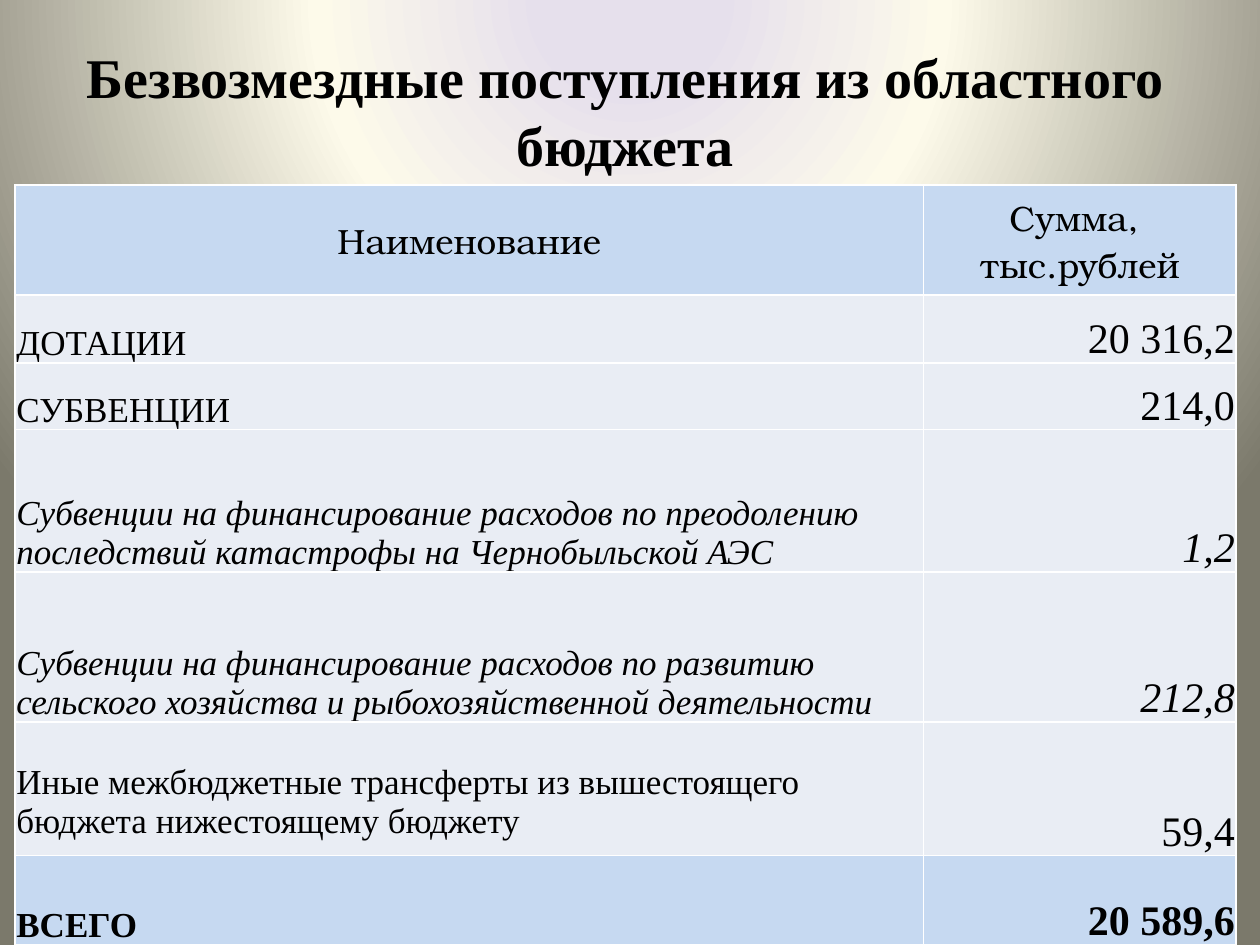
from lxml import etree
from pptx import Presentation
from pptx import util as u
from pptx.dml.color import RGBColor
from pptx.enum import text
from pptx.oxml.ns import qn

BLACK = RGBColor(0x00, 0x00, 0x00)
WHITE = RGBColor(0xFF, 0xFF, 0xFF)
HEADER_BLUE = RGBColor(0xC6, 0xD9, 0xF1)
ROW_GREY = RGBColor(0xE9, 0xED, 0xF4)
LAVENDER = RGBColor(0xE6, 0xE0, 0xEC)
CREAM = RGBColor(0xFD, 0xFA, 0xEA)
OLIVE = RGBColor(0x7B, 0x79, 0x6B)

BODY_FONT = "Times New Roman"
HEADER_FONT = "TeX Gyre Bonum"

COLUMN_WIDTHS = [7.21, 2.48]
HEADERS = ["Наименование", "Сумма, \vтыс.рублей"]
# Row height, name, amount, bold, italic
INCOME_ROWS = [
    (0.54, "ДОТАЦИИ", "20 316,2", False, False),
    (0.53, "СУБВЕНЦИИ", "214,0", False, False),
    (1.13, "Субвенции на финансирование расходов по преодолению "
           "последствий катастрофы на Чернобыльской АЭС", "1,2", False, True),
    (1.19, "Субвенции на финансирование расходов по развитию сельского "
           "хозяйства и рыбохозяйственной деятельности", "212,8", False, True),
    (1.06, "Иные межбюджетные трансферты из вышестоящего бюджета "
           "нижестоящему бюджету", "59,4", False, False),
    (0.71, "ВСЕГО", "20 589,6", True, False),
]
HEADER_HEIGHT = 0.87
TRANSFERS_ROW = 5


def set_background(slide):
    """Radial gradient centred above the slide."""
    slide.background.fill.gradient()
    gradient = slide.element.find(".//" + qn("a:gradFill"))
    for child in list(gradient):
        gradient.remove(child)
    stops = etree.SubElement(gradient, qn("a:gsLst"))
    for percent, color in [(11, LAVENDER), (40, CREAM), (100, OLIVE)]:
        stop = etree.SubElement(stops, qn("a:gs"), pos=str(percent * 1000))
        etree.SubElement(stop, qn("a:srgbClr"), val=str(color))
    circle = etree.SubElement(gradient, qn("a:path"), path="circle")
    etree.SubElement(circle, qn("a:fillToRect"),
                     l="50000", t="-80000", r="50000", b="180000")


def format_text(text_frame, size, font_name, alignment, bold=False, italic=False):
    for paragraph in text_frame.paragraphs:
        paragraph.alignment = alignment
        for run in paragraph.runs:
            font = run.font
            font.size, font.name = u.Pt(size), font_name
            font.bold, font.italic = bold, italic
            font.color.rgb = BLACK


def add_title(slide, wording):
    title = slide.shapes.title
    title.left, title.top = u.Inches(0.28), u.Inches(0.29)
    title.width, title.height = u.Inches(9.37), u.Inches(1.72)
    frame = title.text_frame
    frame.text = wording
    frame.word_wrap = True
    frame.auto_size = text.MSO_AUTO_SIZE.NONE
    frame.vertical_anchor = text.MSO_ANCHOR.TOP
    format_text(frame, 32, BODY_FONT, text.PP_ALIGN.CENTER, bold=True)


def style_cell(cell, fill_color, anchor):
    cell.margin_left = cell.margin_right = cell.margin_top = u.Inches(0.01)
    cell.margin_bottom = 0
    cell.vertical_anchor = anchor
    properties = cell._tc.get_or_add_tcPr()
    for side in ("lnL", "lnR", "lnT", "lnB"):
        line = etree.SubElement(properties, qn("a:" + side), w=str(u.Pt(1)))
        line_fill = etree.SubElement(line, qn("a:solidFill"))
        etree.SubElement(line_fill, qn("a:srgbClr"), val=str(WHITE))
    cell.fill.solid()
    cell.fill.fore_color.rgb = fill_color


def add_income_table(slide):
    heights = [HEADER_HEIGHT] + [row[0] for row in INCOME_ROWS]
    frame = slide.shapes.add_table(
        len(heights), len(COLUMN_WIDTHS), u.Inches(0.12), u.Inches(1.47),
        u.Inches(sum(COLUMN_WIDTHS)), u.Inches(sum(heights)))
    table = frame.table
    for column, width in zip(table.columns, COLUMN_WIDTHS):
        column.width = u.Inches(width)
    for row, height in zip(table.rows, heights):
        row.height = u.Inches(height)

    # Header row
    for cell, wording in zip(table.rows[0].cells, HEADERS):
        cell.text = wording
        style_cell(cell, HEADER_BLUE, text.MSO_ANCHOR.MIDDLE)
        format_text(cell.text_frame, 20, HEADER_FONT, text.PP_ALIGN.CENTER)

    # Income rows, the total in bold
    for index, (_, name, amount, bold, italic) in enumerate(INCOME_ROWS, start=1):
        columns = [(name, 20, text.PP_ALIGN.LEFT), (amount, 24, text.PP_ALIGN.RIGHT)]
        for cell, (wording, size, alignment) in zip(table.rows[index].cells, columns):
            cell.text = wording
            style_cell(cell, HEADER_BLUE if bold else ROW_GREY, text.MSO_ANCHOR.BOTTOM)
            format_text(cell.text_frame, size, BODY_FONT, alignment, bold, italic)

    # The transfers name hangs from the top of its row
    transfers = table.cell(TRANSFERS_ROW, 0)
    transfers.vertical_anchor = text.MSO_ANCHOR.TOP
    transfers.margin_top = u.Inches(0.33)


def main():
    presentation = Presentation()
    presentation.slide_width = u.Inches(10)
    presentation.slide_height = u.Inches(7.5)
    slide = presentation.slides.add_slide(presentation.slide_layouts[5])
    set_background(slide)
    add_title(slide, "Безвозмездные поступления из областного бюджета")
    add_income_table(slide)
    presentation.save("out.pptx")


if __name__ == "__main__":
    main()
